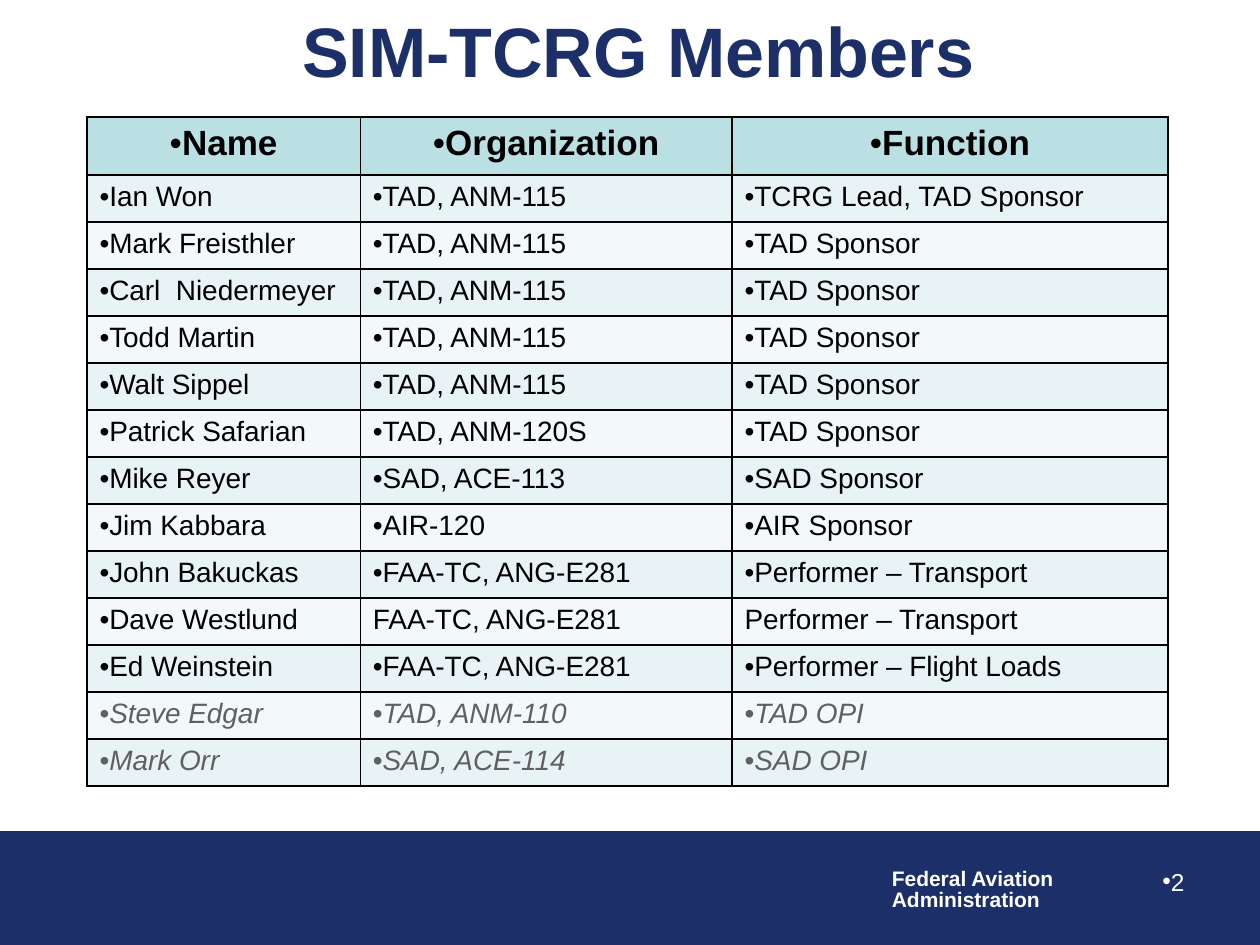
from dataclasses import dataclass

from lxml import etree
from pptx import Presentation
from pptx.dml.color import RGBColor
from pptx.enum.shapes import MSO_SHAPE
from pptx.enum.text import MSO_ANCHOR, PP_ALIGN
from pptx.oxml.ns import qn
from pptx.util import Inches, Pt

RECTANGLE = MSO_SHAPE.RECTANGLE
LEFT, CENTER, RIGHT = PP_ALIGN.LEFT, PP_ALIGN.CENTER, PP_ALIGN.RIGHT
TOP, MIDDLE = MSO_ANCHOR.TOP, MSO_ANCHOR.MIDDLE
COLUMNS, ROWS = 100, 75


@dataclass(frozen=True)
class Theme:
    font: str = "Arial"
    navy: str = "1D2F68"
    white: str = "FFFFFF"
    black: str = "000000"
    gray: str = "606060"
    header_fill: str = "BBE0E3"
    odd_fill: str = "E7F3F4"
    even_fill: str = "F3F9FA"
    title_size: int = 40
    header_size: int = 20
    body_size: int = 16
    number_size: int = 14
    agency_size: int = 12


class SlideBuilder:
    """Draws elements on one slide, placed on a grid of COLUMNS by ROWS."""

    def __init__(self, presentation, theme):
        self.theme = theme
        self.column = presentation.slide_width / COLUMNS
        self.row = presentation.slide_height / ROWS
        self.slide = presentation.slides.add_slide(presentation.slide_layouts[6])

    def place(self, left, top, width, height):
        return (round(left * self.column), round(top * self.row),
                round(width * self.column), round(height * self.row))

    def add_bullet(self, paragraph):
        properties = paragraph._p.get_or_add_pPr()
        properties.set("marL", "0")
        properties.set("indent", "0")
        etree.SubElement(properties, qn("a:buFont")).set("typeface", self.theme.font)
        etree.SubElement(properties, qn("a:buChar")).set("char", "•")

    def set_text(self, text_frame, text, size, color, align=LEFT, bold=False,
                 italic=False, bullet=False, line_spacing=None):
        text_frame.text = text
        for paragraph in text_frame.paragraphs:
            paragraph.alignment = align
            if line_spacing:
                paragraph.line_spacing = line_spacing
            if bullet:
                self.add_bullet(paragraph)
            for run in paragraph.runs:
                run.font.name = self.theme.font
                run.font.size = Pt(size)
                run.font.bold = bold
                run.font.italic = italic
                run.font.color.rgb = RGBColor.from_string(color)

    def band(self, box, color):
        shape = self.slide.shapes.add_shape(RECTANGLE, *self.place(*box))
        shape.shadow.inherit = False
        shape.fill.solid()
        shape.fill.fore_color.rgb = RGBColor.from_string(color)
        shape.line.color.rgb = RGBColor.from_string(color)
        shape.line.width = Pt(0.75)

    def text(self, box, text, size, color, anchor=TOP, wrap=True, **style):
        text_frame = self.slide.shapes.add_textbox(*self.place(*box)).text_frame
        text_frame.word_wrap = wrap
        text_frame.vertical_anchor = anchor
        self.set_text(text_frame, text, size, color, **style)

    def border(self, cell):
        properties = cell._tc.get_or_add_tcPr()
        for index, side in enumerate(("lnL", "lnR", "lnT", "lnB")):
            line = etree.Element(qn(f"a:{side}"), w=str(Pt(1)))
            fill = etree.SubElement(line, qn("a:solidFill"))
            etree.SubElement(fill, qn("a:srgbClr")).set("val", self.theme.black)
            properties.insert(index, line)

    def fill_cell(self, cell, text, fill, **style):
        cell.fill.solid()
        cell.fill.fore_color.rgb = RGBColor.from_string(fill)
        self.border(cell)
        self.set_text(cell.text_frame, text, **style)

    def member_table(self, box, widths, header_height, header, members,
                     unbulleted, former):
        theme = self.theme
        table = self.slide.shapes.add_table(
            len(members) + 1, len(header), *self.place(*box)).table
        for column, width in zip(table.columns, widths):
            column.width = round(width * self.column)
        body_height = (box[3] - header_height) / len(members)
        for index, row in enumerate(table.rows):
            height = body_height if index else header_height
            row.height = round(height * self.row)

        for column, text in enumerate(header):
            self.fill_cell(table.cell(0, column), text, theme.header_fill,
                           size=theme.header_size, color=theme.black,
                           align=CENTER, bold=True, bullet=True)
        for index, member in enumerate(members, start=1):
            is_former = member[0] in former
            for column, text in enumerate(member):
                self.fill_cell(
                    table.cell(index, column), text,
                    theme.odd_fill if index % 2 else theme.even_fill,
                    size=theme.body_size,
                    color=theme.gray if is_former else theme.black,
                    italic=is_former,
                    bullet=column == 0 or member[0] not in unbulleted)


HEADER = ("Name", "Organization", "Function")
MEMBERS = (
    ("Ian Won", "TAD, ANM-115", "TCRG Lead, TAD Sponsor"),
    ("Mark Freisthler", "TAD, ANM-115", "TAD Sponsor"),
    ("Carl  Niedermeyer", "TAD, ANM-115", "TAD Sponsor"),
    ("Todd Martin", "TAD, ANM-115", "TAD Sponsor"),
    ("Walt Sippel", "TAD, ANM-115", "TAD Sponsor"),
    ("Patrick Safarian", "TAD, ANM-120S", "TAD Sponsor"),
    ("Mike Reyer", "SAD, ACE-113", "SAD Sponsor"),
    ("Jim Kabbara", "AIR-120", "AIR Sponsor"),
    ("John Bakuckas", "FAA-TC, ANG-E281", "Performer – Transport"),
    ("Dave Westlund", "FAA-TC, ANG-E281", "Performer – Transport"),
    ("Ed Weinstein", "FAA-TC, ANG-E281", "Performer – Flight Loads"),
    ("Steve Edgar", "TAD, ANM-110", "TAD OPI"),
    ("Mark Orr", "SAD, ACE-114", "SAD OPI"),
)


def main():
    theme = Theme()
    presentation = Presentation()
    presentation.slide_width = Inches(10)
    presentation.slide_height = Inches(7.5)
    builder = SlideBuilder(presentation, theme)

    # Footer band with agency name and page number
    builder.band((0, 66, 100, 8.95), theme.navy)
    builder.text((69.8, 68.5, 15, 4.4), "Federal Aviation\nAdministration",
                 theme.agency_size, theme.white, wrap=False, bold=True,
                 line_spacing=0.85)
    builder.text((71.7, 68.3, 23.3, 5.2), "2", theme.number_size, theme.white,
                 align=RIGHT, bullet=True)

    # Title
    builder.text((4.3, 0.6, 92.7, 6.7), "SIM-TCRG Members", theme.title_size,
                 theme.navy, anchor=MIDDLE, align=CENTER, bold=True)

    # Members
    builder.member_table((6.9, 9.3, 85.8, 53.1), (21.7, 29.5, 34.6), 4.6,
                         HEADER, MEMBERS, unbulleted={"Dave Westlund"},
                         former={"Steve Edgar", "Mark Orr"})

    presentation.save("out.pptx")


if __name__ == "__main__":
    main()
